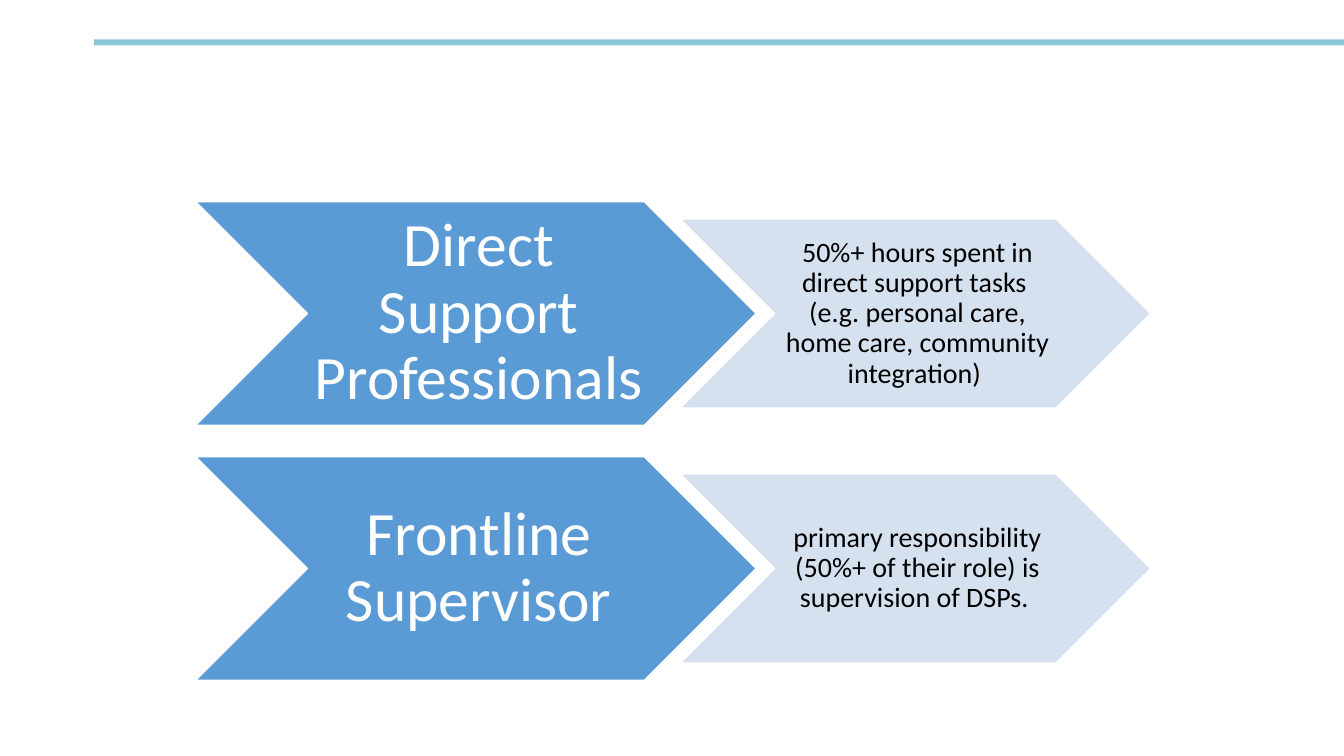
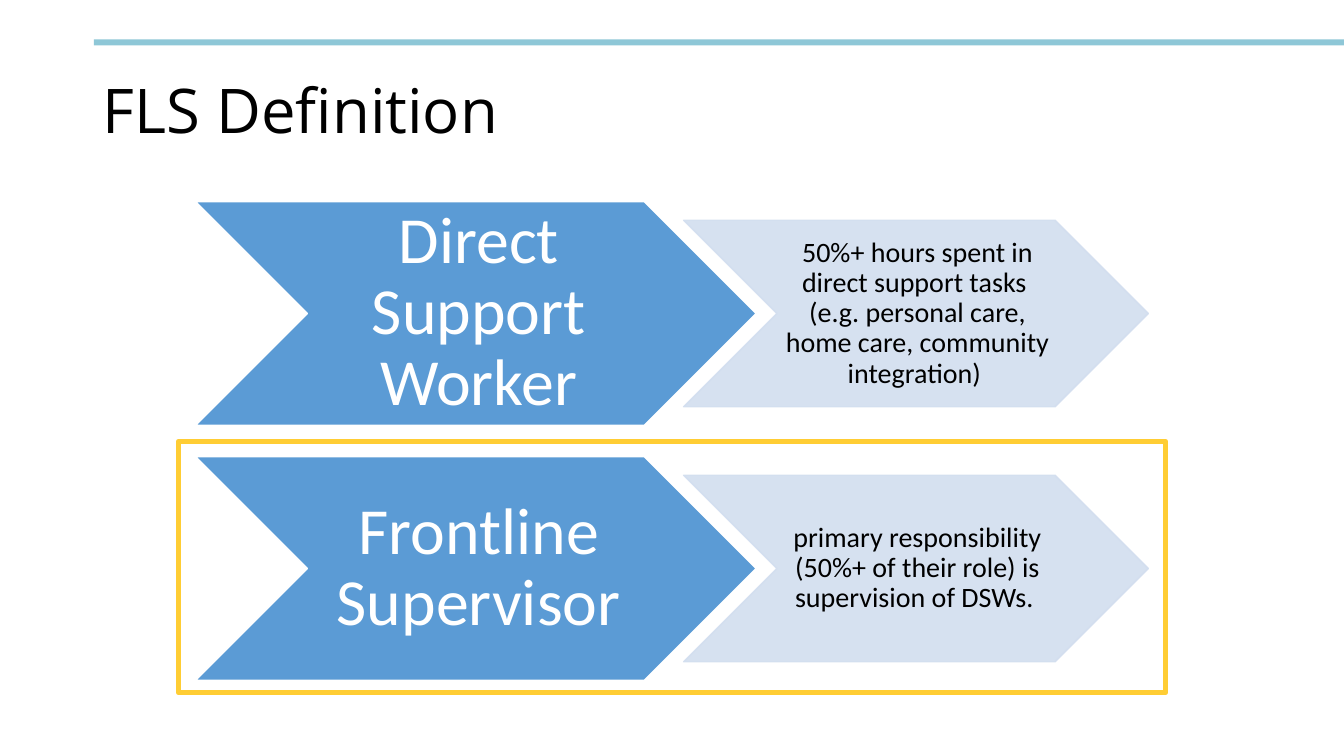
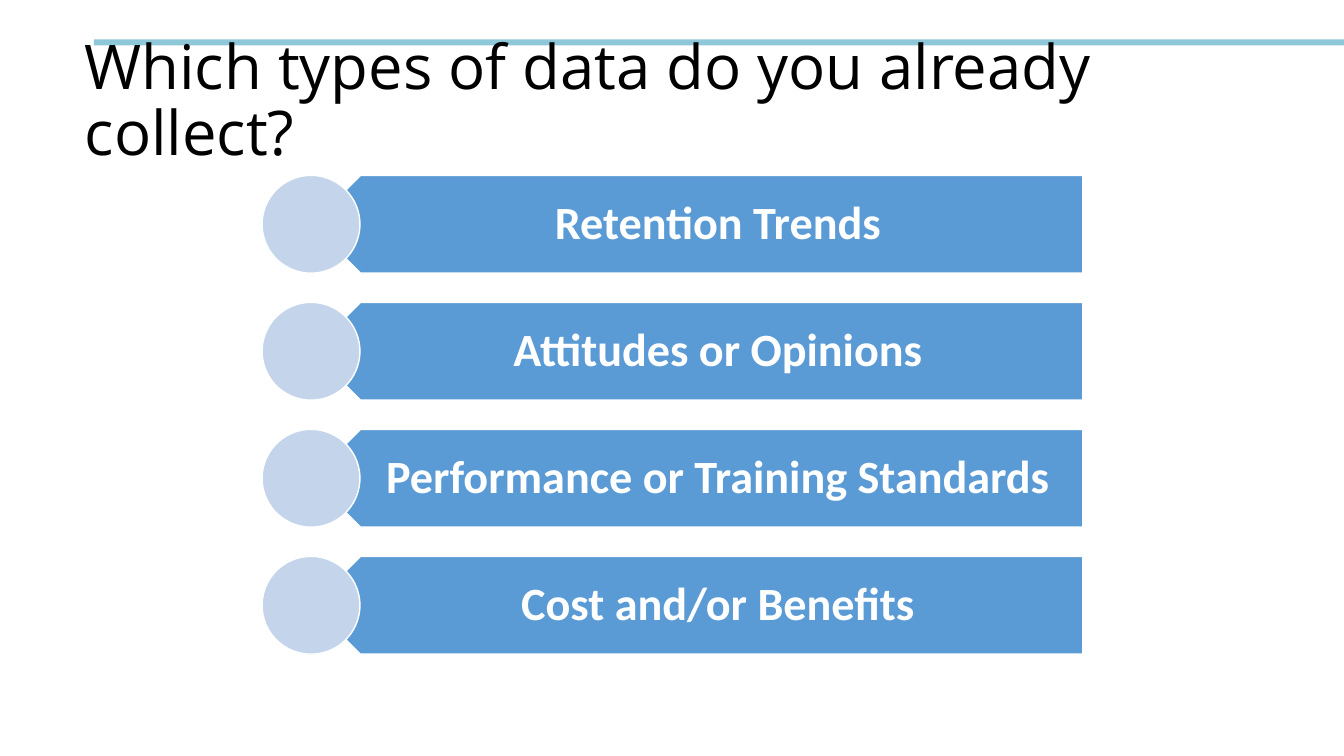
from dataclasses import dataclass
from typing import Any, Optional

from lxml import etree
from pptx import Presentation
from pptx.dml.color import RGBColor
from pptx.enum.shapes import MSO_SHAPE
from pptx.enum.text import MSO_ANCHOR, MSO_AUTO_SIZE, PP_ALIGN
from pptx.oxml.ns import qn
from pptx.util import Inches, Pt

RECTANGLE, CHEVRON = MSO_SHAPE.RECTANGLE, MSO_SHAPE.CHEVRON
PENTAGON, OVAL = MSO_SHAPE.PENTAGON, MSO_SHAPE.OVAL
LEFT, CENTER = PP_ALIGN.LEFT, PP_ALIGN.CENTER
MIDDLE, NO_AUTOFIT = MSO_ANCHOR.MIDDLE, MSO_AUTO_SIZE.NONE
TITLE_ONLY, BLANK = 5, 6


@dataclass(frozen=True)
class Theme:
    band: str = "8EC7D7"
    blue: str = "5B9BD5"
    pale_blue: str = "D2DEEF"
    circle: str = "C4D5EB"
    highlight: str = "FFCD34"
    white: str = "FFFFFF"
    black: str = "000000"
    title_font: str = "Open Sans"
    body_font: str = "Calibri"
    title_size: float = 44
    role_size: float = 44
    large_role_size: float = 47
    description_size: float = 20
    bar_size: float = 33
    line_spacing: float = 0.9


THEME = Theme()


@dataclass(frozen=True)
class Box:
    left: float
    top: float
    width: float
    height: float

    def lengths(self) -> tuple:
        return tuple(Inches(v) for v in (self.left, self.top, self.width, self.height))


@dataclass(frozen=True)
class TextStyle:
    size: float
    color: str
    font: str = THEME.body_font
    bold: bool = False
    align: Any = CENTER
    insets: tuple = (0.1, 0.05, 0.1, 0.05)


@dataclass(frozen=True)
class Role:
    name: str
    description: str


TITLE_STYLE = TextStyle(THEME.title_size, THEME.black, THEME.title_font, align=LEFT)
DESCRIPTION_STYLE = TextStyle(THEME.description_size, THEME.black, insets=(0.03, 0.01, 0, 0.01))
BAR_STYLE = TextStyle(THEME.bar_size, THEME.white, bold=True, insets=(0.43, 0.14, 0.26, 0.14))

ROLE_TOP, ROLE_PITCH = 2, 2.53
ROLE_HEIGHT, DESCRIPTION_HEIGHT = 2.22, 1.85
BAR_TOP, BAR_PITCH, BAR_HEIGHT = 1.74, 1.26, 0.97

DIRECT_SUPPORT = "50%+ hours spent in direct support tasks  (e.g. personal care, home care, community integration) "
SUPERVISION = "primary responsibility (50%+ of their role) is supervision of {}. "
DATA_TYPES = (
    "Retention Trends",
    "Attitudes or Opinions",
    "Performance or Training Standards",
    "Cost and/or Benefits",
)


def set_all(target: Any, values: dict) -> None:
    for name, value in values.items():
        setattr(target, name, value)


def write(shape: Any, text: str, style: TextStyle) -> None:
    frame = shape.text_frame
    frame.text = text
    left, top, right, bottom = (Inches(inset) for inset in style.insets)
    set_all(frame, {
        "word_wrap": True, "auto_size": NO_AUTOFIT, "vertical_anchor": MIDDLE,
        "margin_left": left, "margin_top": top,
        "margin_right": right, "margin_bottom": bottom,
    })
    paragraph = frame.paragraphs[0]
    set_all(paragraph, {"alignment": style.align, "line_spacing": THEME.line_spacing})
    font = paragraph.runs[0].font
    set_all(font, {"name": style.font, "size": Pt(style.size), "bold": style.bold})
    font.color.rgb = RGBColor.from_string(style.color)


def add_shape(slide: Any, kind: Any, box: Box, fill: Optional[str] = None,
              line: Optional[str] = None, line_width: float = 1) -> Any:
    shape = slide.shapes.add_shape(kind, *box.lengths())
    shape.shadow.inherit = False
    if fill:
        shape.fill.solid()
        shape.fill.fore_color.rgb = RGBColor.from_string(fill)
    else:
        shape.fill.background()
    if line:
        shape.line.color.rgb = RGBColor.from_string(line)
        shape.line.width = Pt(line_width)
    else:
        shape.line.fill.background()
    return shape


def set_opacity(shape: Any, percent: int) -> None:
    """Apply one opacity to both fill and outline."""
    for color in shape.element.spPr.iter(qn("a:srgbClr")):
        etree.SubElement(color, qn("a:alpha")).set("val", str(percent * 1000))


def add_band_to_master(presentation: Any, slide: Any) -> None:
    """Draw the top band, then move it to the master that all slides share."""
    band = add_shape(slide, RECTANGLE, Box(0.93, 0.39, 12.41, 0.06), THEME.band)
    band.element.nvSpPr.cNvPr.set("id", "20")
    presentation.slide_master.element.cSld.spTree.append(band.element)


def add_titled_slide(presentation: Any, text: str, box: Box) -> Any:
    slide = presentation.slides.add_slide(presentation.slide_layouts[TITLE_ONLY])
    title = slide.shapes.title
    set_all(title, dict(zip(("left", "top", "width", "height"), box.lengths())))
    write(title, text, TITLE_STYLE)
    return slide


def add_roles(slide: Any, roles: tuple, role_size: float) -> None:
    role_style = TextStyle(role_size, THEME.white, insets=(0.06, 0.03, 0, 0.03))
    for index, role in enumerate(roles):
        top = ROLE_TOP + index * ROLE_PITCH
        name = add_shape(slide, CHEVRON, Box(1.94, top, 5.56, ROLE_HEIGHT),
                         THEME.blue, THEME.white)
        write(name, role.name, role_style)
        inner_top = top + (ROLE_HEIGHT - DESCRIPTION_HEIGHT) / 2
        description = add_shape(slide, CHEVRON, Box(6.78, inner_top, 4.61, DESCRIPTION_HEIGHT),
                                THEME.pale_blue, THEME.pale_blue)
        set_opacity(description, 90)
        write(description, role.description, DESCRIPTION_STYLE)


def add_data_bars(slide: Any, labels: tuple) -> None:
    for index, label in enumerate(labels):
        top = BAR_TOP + index * BAR_PITCH
        bar = add_shape(slide, PENTAGON, Box(3.09, top, 7.65, BAR_HEIGHT),
                        THEME.blue, THEME.white)
        bar.element.spPr.xfrm.set("flipH", "1")
        write(bar, label, BAR_STYLE)
        add_shape(slide, OVAL, Box(2.6, top, BAR_HEIGHT, BAR_HEIGHT),
                  THEME.circle, THEME.white)


def main() -> None:
    presentation = Presentation()
    set_all(presentation, {"slide_width": Inches(13.33), "slide_height": Inches(7.5)})

    roles_slide = presentation.slides.add_slide(presentation.slide_layouts[BLANK])
    add_band_to_master(presentation, roles_slide)
    add_roles(roles_slide, (
        Role("Direct Support Professionals", DIRECT_SUPPORT),
        Role("Frontline Supervisor", SUPERVISION.format("DSPs")),
    ), THEME.role_size)

    definition_slide = add_titled_slide(presentation, "FLS Definition", Box(0.92, 0.4, 11.5, 1.45))
    add_roles(definition_slide, (
        Role("Direct Support Worker", DIRECT_SUPPORT),
        Role("Frontline Supervisor", SUPERVISION.format("DSWs")),
    ), THEME.large_role_size)
    add_shape(definition_slide, RECTANGLE, Box(1.77, 4.38, 9.79, 2.49),
              line=THEME.highlight, line_width=4)

    data_slide = add_titled_slide(presentation, "Which types of data do you already collect?",
                                  Box(0.74, 0.29, 12.28, 1.45))
    add_data_bars(data_slide, DATA_TYPES)

    presentation.save("out.pptx")


if __name__ == "__main__":
    main()
